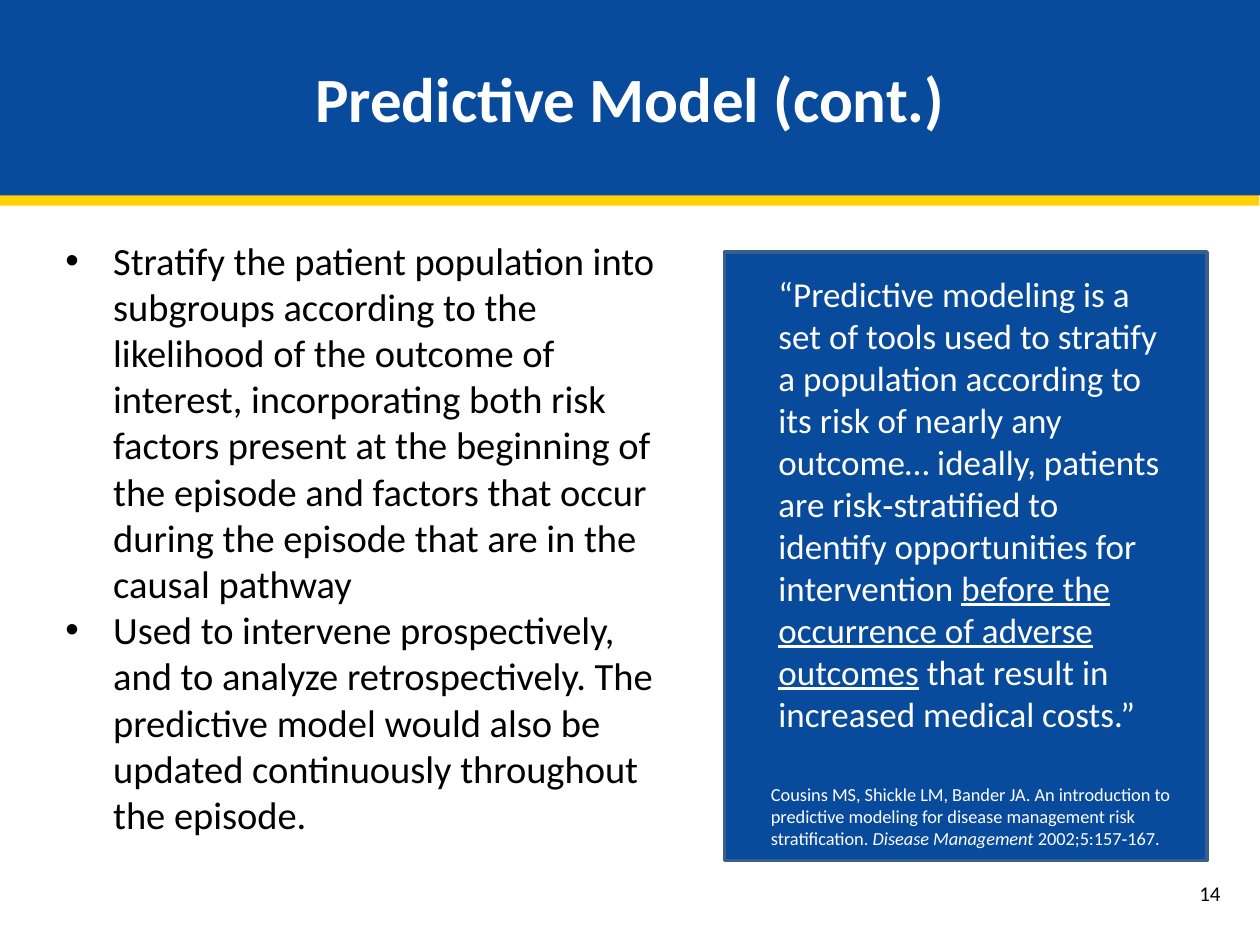
from lxml import etree
from pptx import Presentation
from pptx import util as u
from pptx.dml.color import RGBColor
from pptx.enum import shapes, text
from pptx.oxml import ns

BLUE = RGBColor(0x08, 0x4A, 0x9C)
BORDER = RGBColor(0x3A, 0x5F, 0x8C)
YELLOW = RGBColor(0xFF, 0xD0, 0x04)
WHITE = RGBColor(0xFF, 0xFF, 0xFF)
BLACK = RGBColor(0, 0, 0)


class SlideBuilder:
    font = "Calibri"

    def __init__(self, slide):
        self.slide = slide

    def panel(self, x, y, w, h, fill, line=None):
        """Add a filled rectangle, outlined only if a line colour is given."""
        panel = self.slide.shapes.add_shape(
            shapes.MSO_SHAPE.RECTANGLE, *map(u.Inches, (x, y, w, h)))
        panel.fill.solid()
        panel.fill.fore_color.rgb = fill
        if line is None:
            panel.line.fill.background()
        else:
            panel.line.color.rgb = line
            panel.line.width = u.Pt(2)
        panel.shadow.inherit = False
        return panel

    def hard_shadow(self, panel, color, distance, angle):
        """Give a panel an unblurred, offset shadow."""
        effects = panel._element.spPr.find(ns.qn("a:effectLst"))
        shadow = etree.SubElement(
            effects, ns.qn("a:outerShdw"), blurRad="0", dist=str(u.Pt(distance)),
            dir=str(angle * 60000), algn="t", rotWithShape="0")
        etree.SubElement(shadow, ns.qn("a:srgbClr"), val=str(color))

    def runs(self, paragraph, pieces, size, color):
        """Add (wording, style) pieces; style is a font attribute or None."""
        for wording, style in pieces:
            run = paragraph.add_run()
            run.text = wording
            run.font.name = self.font
            run.font.size = u.Pt(size)
            run.font.color.rgb = color
            if style:
                setattr(run.font, style, True)

    def bullet(self, paragraph, indent):
        """Hang a round bullet in front of a paragraph."""
        props = paragraph._p.get_or_add_pPr()
        props.set("marL", str(u.Inches(indent)))
        props.set("indent", str(-u.Inches(indent)))
        etree.SubElement(props, ns.qn("a:buFont"), typeface="Arial")
        etree.SubElement(props, ns.qn("a:buChar"), char="•")

    def textbox(self, x, y, w, h, paragraphs, size, color, indent=None):
        """Add a wrapping text box, bulleted if an indent is given."""
        box = self.slide.shapes.add_textbox(*map(u.Inches, (x, y, w, h)))
        frame = box.text_frame
        frame.word_wrap = True
        for i, pieces in enumerate(paragraphs):
            paragraph = frame.add_paragraph() if i else frame.paragraphs[0]
            if indent:
                self.bullet(paragraph, indent)
            self.runs(paragraph, pieces, size, color)


def main():
    prs = Presentation()
    prs.slide_width, prs.slide_height = u.Inches(10), u.Inches(7.5)
    build = SlideBuilder(prs.slides.add_slide(prs.slide_layouts[6]))

    # Page number
    build.textbox(9.42, 6.94, 0.5, 0.3, [[("14", None)]], 12, BLACK)

    # Title band with its yellow edge
    title = build.panel(0, 0, 10, 1.55, BLUE)
    build.hard_shadow(title, YELLOW, distance=6, angle=94)
    title.text_frame.vertical_anchor = text.MSO_ANCHOR.MIDDLE
    heading = title.text_frame.paragraphs[0]
    heading.alignment = text.PP_ALIGN.CENTER
    build.runs(heading, [("Predictive Model (cont.)", "bold")], 36, WHITE)

    # Uses of the model
    uses = [
        "Stratify the patient population into subgroups according to the "
        "likelihood of the outcome of interest, incorporating both risk factors "
        "present at the beginning of the episode and factors that occur during "
        "the episode that are in the causal pathway",
        "Used to intervene prospectively, and to analyze retrospectively. The "
        "predictive model would also be updated continuously throughout the "
        "episode.",
    ]
    build.textbox(0.42, 1.83, 5.08, 4.91, [[(use, None)] for use in uses],
                  22, BLACK, indent=0.38)

    # Quotation panel
    build.panel(5.75, 2, 3.83, 4.83, BLUE, BORDER)
    quotation = [
        ("“Predictive modeling is a set of tools used to stratify a population "
         "according to its risk of nearly any outcome… ideally, patients are "
         "risk‐stratified to identify opportunities for intervention ", None),
        ("before the occurrence of adverse outcomes", "underline"),
        (" that result in increased medical costs.”", None),
    ]
    build.textbox(6.08, 2.11, 3.25, 4.14, [quotation], 20, WHITE)

    # Citation
    citation = [
        ("Cousins MS, Shickle LM, Bander JA. An introduction to predictive "
         "modeling for disease management risk stratification. ", None),
        ("Disease Management ", "italic"),
        ("2002;5:157‐167.", None),
    ]
    build.textbox(6.02, 6.17, 3.38, 0.63, [citation], 10.5, WHITE)

    prs.save("out.pptx")


if __name__ == "__main__":
    main()
